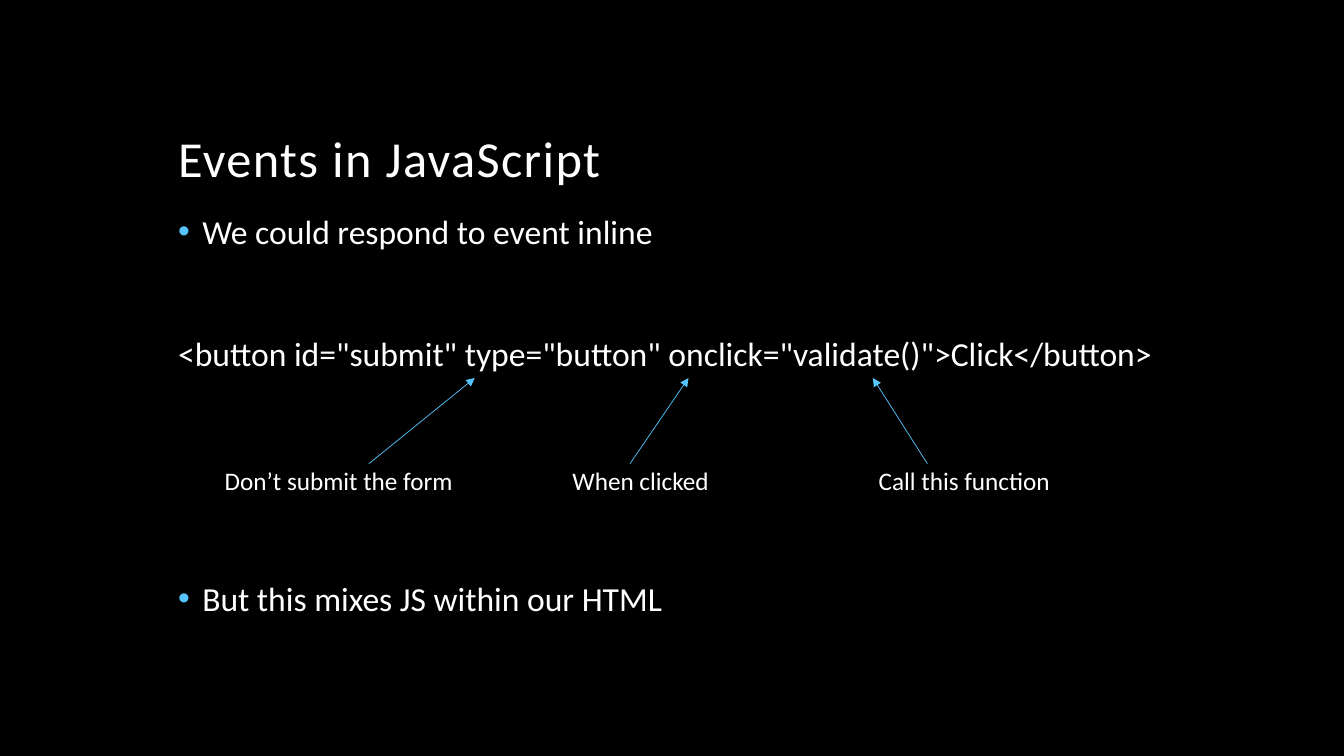
from dataclasses import dataclass

import pptx
import pptx.dml.color
import pptx.enum.shapes
import pptx.enum.text
import pptx.oxml
import pptx.oxml.ns
import pptx.util
from pptx.util import Pt

WHITE, BLACK, SKY = "FFFFFF", "000000", "56C5FF"
FONT = "Calibri"
LEFT = 120
LABEL_TOP, ARROW_START, ARROW_END = 329, 331.2, 270
INDENT = 17.28


@dataclass
class Line:
    text: str
    before: float
    bullet: bool


@dataclass
class Callout:
    text: str
    left: float
    width: float
    start: float
    end: float


LINES = [
    Line("We could respond to event inline", 0, True),
    Line('<button id="submit" type="button" onclick="validate()">Click</button>', 61.5, False),
    Line("But this mixes JS within our HTML", 149, True),
]

CALLOUTS = [
    Callout("Don’t submit the form", 153.4, 185.8, 263.5, 339.1),
    Callout("When clicked", 401.8, 114.5, 450, 491.8),
    Callout("Call this function", 620.6, 139.7, 662.4, 623.5),
]


def color(value: str) -> pptx.dml.color.RGBColor:
    return pptx.dml.color.RGBColor.from_string(value)


def format_runs(p, size: float) -> None:
    p.alignment = pptx.enum.text.PP_ALIGN.LEFT
    for r in p.runs:
        r.font.name = FONT
        r.font.size = Pt(size)
        r.font.color.rgb = color(WHITE)


def place(sp, left: float, top: float, width: float, height: float) -> None:
    sp.left, sp.top, sp.width, sp.height = Pt(left), Pt(top), Pt(width), Pt(height)


def add_child(parent, tag: str, **attrs: str):
    child = pptx.oxml.ns.qn(tag)
    el = parent.makeelement(child, attrs)
    parent.append(el)
    return el


def set_bullet(p, bullet: bool) -> None:
    pPr = p._p.get_or_add_pPr()
    pPr.set("marL", str(Pt(INDENT) if bullet else 0))
    pPr.set("indent", str(-Pt(INDENT) if bullet else 0))
    if bullet:
        add_child(add_child(pPr, "a:buClr"), "a:srgbClr", val=SKY)
        add_child(pPr, "a:buFont", typeface="Arial")
        add_child(pPr, "a:buChar", char="•")
    else:
        add_child(pPr, "a:buNone")


def fill_title(sp, text: str) -> None:
    place(sp, LEFT, 30, 720, 108)
    tf = sp.text_frame
    tf.text = text
    tf.auto_size = pptx.enum.text.MSO_AUTO_SIZE.NONE
    tf.vertical_anchor = pptx.enum.text.MSO_ANCHOR.BOTTOM
    p = tf.paragraphs[0]
    p.line_spacing = 0.9
    format_runs(p, 36)
    p.runs[0].font._element.set("spc", "100")


def fill_body(sp, lines: list[Line]) -> None:
    place(sp, LEFT, 150, 719.3, 324)
    tf = sp.text_frame
    tf.auto_size = pptx.enum.text.MSO_AUTO_SIZE.NONE
    tf.vertical_anchor = pptx.enum.text.MSO_ANCHOR.TOP
    for i, line in enumerate(lines):
        p = tf.add_paragraph() if i else tf.paragraphs[0]
        p.text = line.text
        set_bullet(p, line.bullet)
        p.line_spacing = 0.9
        p.space_before = Pt(line.before)
        format_runs(p, 24)


def add_callout(slide, callout: Callout) -> None:
    cxn = slide.shapes.add_connector(
        pptx.enum.shapes.MSO_CONNECTOR.STRAIGHT,
        Pt(callout.start), Pt(ARROW_START), Pt(callout.end), Pt(ARROW_END),
    )
    cxn.line.color.rgb = color(SKY)
    cxn.line.width = Pt(0.5)
    add_child(cxn.line._get_or_add_ln(), "a:tailEnd", type="triangle")
    add_child(cxn._element.spPr, "a:effectLst")

    sp = slide.shapes.add_textbox(Pt(callout.left), Pt(LABEL_TOP), Pt(callout.width), Pt(29))
    tf = sp.text_frame
    tf.text = callout.text
    tf.word_wrap = False
    tf.auto_size = pptx.enum.text.MSO_AUTO_SIZE.SHAPE_TO_FIT_TEXT
    format_runs(tf.paragraphs[0], 18)


def main() -> None:
    prs = pptx.Presentation()
    prs.slide_width, prs.slide_height = Pt(960), Pt(540)
    slide = prs.slides.add_slide(prs.slide_layouts[1])
    slide.background.fill.solid()
    slide.background.fill.fore_color.rgb = color(BLACK)
    fill_title(slide.shapes.title, "Events in JavaScript")
    fill_body(slide.placeholders[1], LINES)
    for callout in CALLOUTS:
        add_callout(slide, callout)
    prs.save("out.pptx")


if __name__ == "__main__":
    main()
